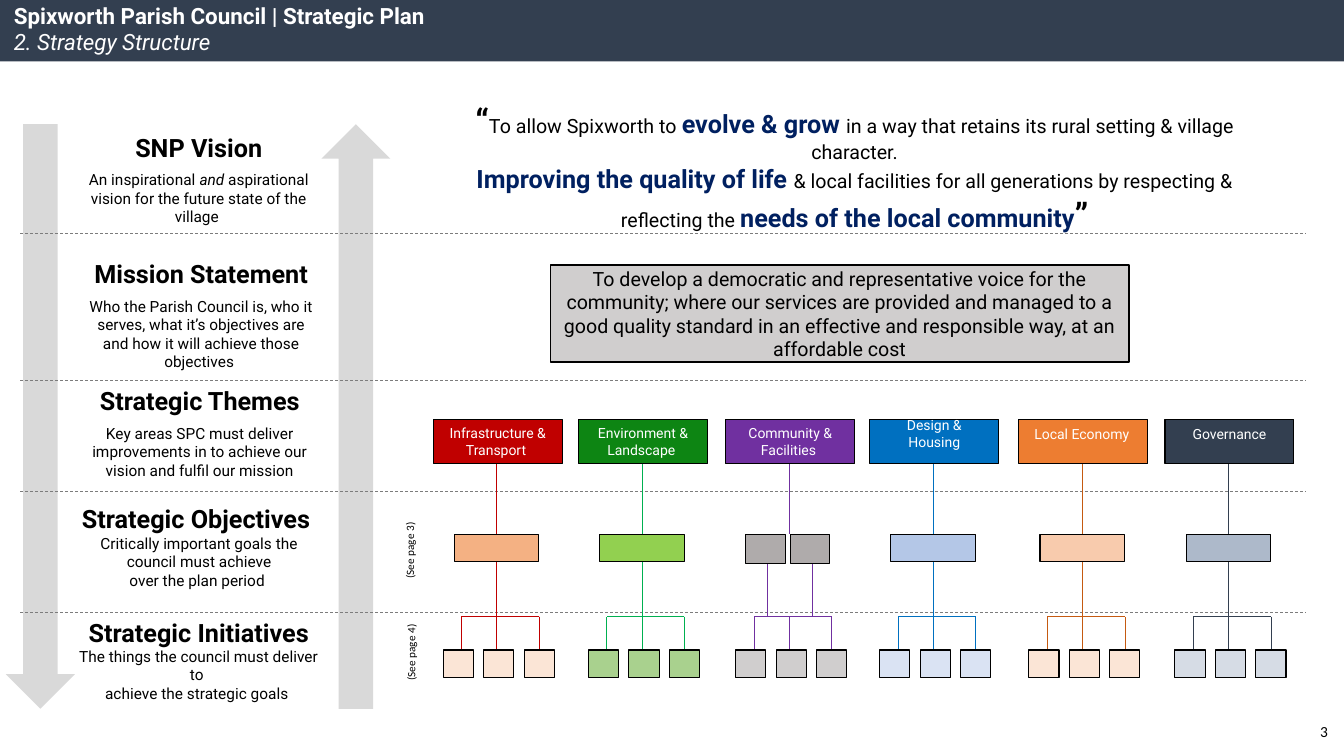
from lxml import etree
from pptx import Presentation
from pptx.dml.color import RGBColor
from pptx.enum.dml import MSO_LINE
from pptx.enum.shapes import MSO_CONNECTOR, MSO_SHAPE
from pptx.enum.text import MSO_ANCHOR, PP_ALIGN
from pptx.oxml.ns import qn
from pptx.util import Cm, Pt

RECTANGLE = MSO_SHAPE.RECTANGLE
DOWN_ARROW = MSO_SHAPE.DOWN_ARROW
STRAIGHT = MSO_CONNECTOR.STRAIGHT
DASH = MSO_LINE.DASH
LEFT, CENTER = PP_ALIGN.LEFT, PP_ALIGN.CENTER
TOP, MIDDLE = MSO_ANCHOR.TOP, MSO_ANCHOR.MIDDLE

BLACK, WHITE, SLATE, NAVY = "000000", "FFFFFF", "333F50", "002060"
ARROW_GREY, RULE_GREY, PANEL_GREY = "D9D9D9", "7C7C7C", "D0CECE"
COMMUNITY = "Community & Facilities "

# Left edge, name, blank lines kept below the name, theme, line, objective, initiative colours
THEMES = [
    (10.92, "Infrastructure & Transport ", 0, "C00000", "C00000", "F4B183", "FBE5D6"),
    (14.58, "Environment & Landscape ", 0, "0D8513", "00B050", "92D050", "A9D18E"),
    (18.29, COMMUNITY, 0, "7030A0", "7030A0", "AFABAB", "D0CECE"),
    (21.92, "Design & Housing", 1, "0070C0", "0070C0", "B4C7E7", "DAE3F3"),
    (25.68, "Local Economy ", 1, "ED7D31", "C55A11", "F8CBAD", "FBE5D6"),
    (29.36, "Governance", 1, SLATE, SLATE, "ADB9CA", "D6DCE5"),
]

# Left, top, width, height, title, space after the title, description
LEVELS = [
    (1.96, 3.2, 6.1, 2.64, "SNP Vision", 6,
     [("An inspirational ", False), ("and", True),
      (" aspirational vision for the future state of the village ", False)]),
    (1.96, 6.38, 6.22, 2.64, "Mission Statement", 6,
     [("Who the Parish Council is, who it serves, what it’s objectives are "
       "and how it will achieve those objectives ", False)]),
    (2.01, 9.58, 6.05, 2.64, "Strategic Themes", 6,
     [("Key areas SPC must deliver improvements in to achieve our vision "
       "and fulfil our mission", False)]),
    (1.78, 12.57, 6.48, 2.44, "Strategic Objectives ", 0,
     [("Critically important goals the council must achieve\v"
       "over the plan period ", False)]),
    (1.63, 15.42, 6.76, 1.96, "Strategic Initiatives", 0,
     [("The things the council must deliver to \v"
       "achieve the strategic goals ", False)]),
]

# Text, size, colour, bold
VISION = [
    [("“", 24, BLACK, True), ("To allow Spixworth to ", 14, BLACK, False),
     ("evolve & grow ", 18, NAVY, True),
     ("in a way that retains its rural setting & village character.", 14, BLACK, False)],
    [("Improving the quality of life ", 18, NAVY, True),
     ("& local facilities for all generations by respecting & reflecting the ",
      14, BLACK, False),
     ("needs of the local community", 18, NAVY, True), ("”", 24, BLACK, True)],
]


def colour(value):
    return RGBColor.from_string(value)


def add_box(page, left, top, width, height, fill, border=None, weight=0.75, kind=RECTANGLE):
    box = page.shapes.add_shape(kind, Cm(left), Cm(top), Cm(width), Cm(height))
    box.shadow.inherit = False
    box.fill.solid()
    box.fill.fore_color.rgb = colour(fill)
    if border:
        box.line.color.rgb = colour(border)
        box.line.width = Pt(weight)
    else:
        box.line.fill.background()
    return box


def add_line(page, x1, y1, x2, y2, line_colour, dash=None):
    line = page.shapes.add_connector(STRAIGHT, Cm(x1), Cm(y1), Cm(x2), Cm(y2))
    line.line.color.rgb = colour(line_colour)
    line.line.width = Pt(0.5)
    if dash:
        line.line.dash_style = dash
    properties = line._element.spPr
    etree.SubElement(properties, qn("a:effectLst"))


def add_text_box(page, left, top, width, height, anchor=TOP, wrap=True):
    box = page.shapes.add_textbox(Cm(left), Cm(top), Cm(width), Cm(height))
    box.text_frame.word_wrap = wrap
    box.text_frame.vertical_anchor = anchor
    return box


def format_span(span, size, font_colour=BLACK, bold=False, italic=False, name="Roboto"):
    span.font.name = name
    span.font.size = Pt(size)
    span.font.bold = bold
    span.font.italic = italic
    span.font.color.rgb = colour(font_colour)


def write_para(para, text, size, align=CENTER, **style):
    para.text = text
    para.alignment = align
    for span in para.runs:
        format_span(span, size, **style)


def add_header(page):
    add_box(page, 0, 0, 33.87, 1.55, SLATE)
    frame = add_text_box(page, 0.1, -0.08, 33.77, 1.63).text_frame
    write_para(frame.paragraphs[0], "Spixworth Parish Council | Strategic Plan", 16, LEFT,
               font_colour=WHITE, bold=True)
    write_para(frame.add_paragraph(), "2. Strategy Structure", 16, LEFT,
               font_colour=WHITE, italic=True)


def add_level(page, left, top, width, height, title, gap, description):
    frame = add_text_box(page, left, top, width, height).text_frame
    heading = frame.paragraphs[0]
    write_para(heading, title, 18, bold=True)
    heading.space_after = Pt(gap)
    para = frame.add_paragraph()
    para.text = description[0][0]
    para.alignment = CENTER
    format_span(para.runs[0], 11)
    for span in para.runs:
        format_span(span, 11)
    for text, italic in description[1:]:
        span = para.add_run()
        span.text = text
        format_span(span, 11, italic=italic)


def add_vision(page):
    frame = add_text_box(page, 10.67, 2.51, 21.74, 3.4, MIDDLE).text_frame
    for index, pieces in enumerate(VISION):
        para = frame.add_paragraph() if index else frame.paragraphs[0]
        para.alignment = CENTER
        for text, size, font_colour, bold in pieces:
            span = para.add_run()
            span.text = text
            format_span(span, size, font_colour, bold)


def add_mission(page):
    panel = add_box(page, 13.87, 6.68, 14.58, 2.44, PANEL_GREY, BLACK, 1)
    panel.text_frame.vertical_anchor = MIDDLE
    write_para(panel.text_frame.paragraphs[0],
               "To develop a democratic and representative voice for the community; where our "
               "services are provided and managed to a good quality standard in an effective "
               "and responsible way, at an affordable cost", 14)


def add_theme(page, left, name, blank_lines, theme, line, objective, initiative):
    """Draw one column: theme, objectives, initiatives and the lines joining them."""
    middle = left + 1.6
    fork_left, fork_right, fork_top = left + 0.71, left + 2.67, 15.54
    add_line(page, middle, 11.38, middle, 13.46, line)
    if name == COMMUNITY:
        add_line(page, middle, fork_top, middle, 16.38, line)
        for offset in (0.51, 1.63):
            stem = left + offset + 0.55
            add_line(page, stem, 14.2, stem, fork_top, line)
            add_box(page, left + offset, 13.46, 0.99, 0.74, objective, BLACK)
    else:
        add_line(page, middle, 13.72, middle, 16.38, line)
        add_box(page, left + 0.53, 13.46, 2.13, 0.69, objective, BLACK)

    box = add_box(page, left, 10.57, 3.25, 1.12, theme, BLACK)
    box.text_frame.vertical_anchor = MIDDLE
    box.text_frame.margin_bottom = Cm(0.13 + 0.41 * blank_lines)
    write_para(box.text_frame.paragraphs[0], name, 10, font_colour=WHITE)

    add_line(page, fork_right, fork_top, fork_left, fork_top, line)
    for x in (fork_left, fork_right):
        add_line(page, x, fork_top, x, 16.59, line)
    for index in range(3):
        add_box(page, left + 0.25 + 1.02 * index, 16.38, 0.76, 0.69, initiative, BLACK)


def add_small_text(page, left, top, width, height, text, size, rotation=0):
    box = add_text_box(page, left, top, width, height, wrap=False)
    box.rotation = rotation
    write_para(box.text_frame.paragraphs[0], text, size, LEFT, name="Calibri")


def main():
    deck = Presentation()
    deck.slide_width, deck.slide_height = Cm(33.87), Cm(19.05)
    page = deck.slides.add_slide(deck.slide_layouts[6])

    for left, rotation in ((8.1, 180), (0.15, 0)):
        arrow = add_box(page, left, 3.13, 1.74, 14.73, ARROW_GREY, kind=DOWN_ARROW)
        arrow.rotation = rotation
    add_header(page)
    add_vision(page)
    add_mission(page)
    for level in LEVELS:
        add_level(page, *level)
    for y in (5.89, 9.58, 12.37, 15.42):
        add_line(page, 0.51, y, 32.92, y, RULE_GREY, DASH)
    for theme in THEMES:
        add_theme(page, *theme)
    add_small_text(page, 9.37, 13.56, 1.93, 0.61, "(See page 3)", 8, 270)
    add_small_text(page, 9.4, 16.13, 1.93, 0.61, "(See page 4)", 8, 270)
    add_small_text(page, 33.02, 18.08, 0.71, 0.74, "3", 11)

    deck.save("out.pptx")


if __name__ == "__main__":
    main()
